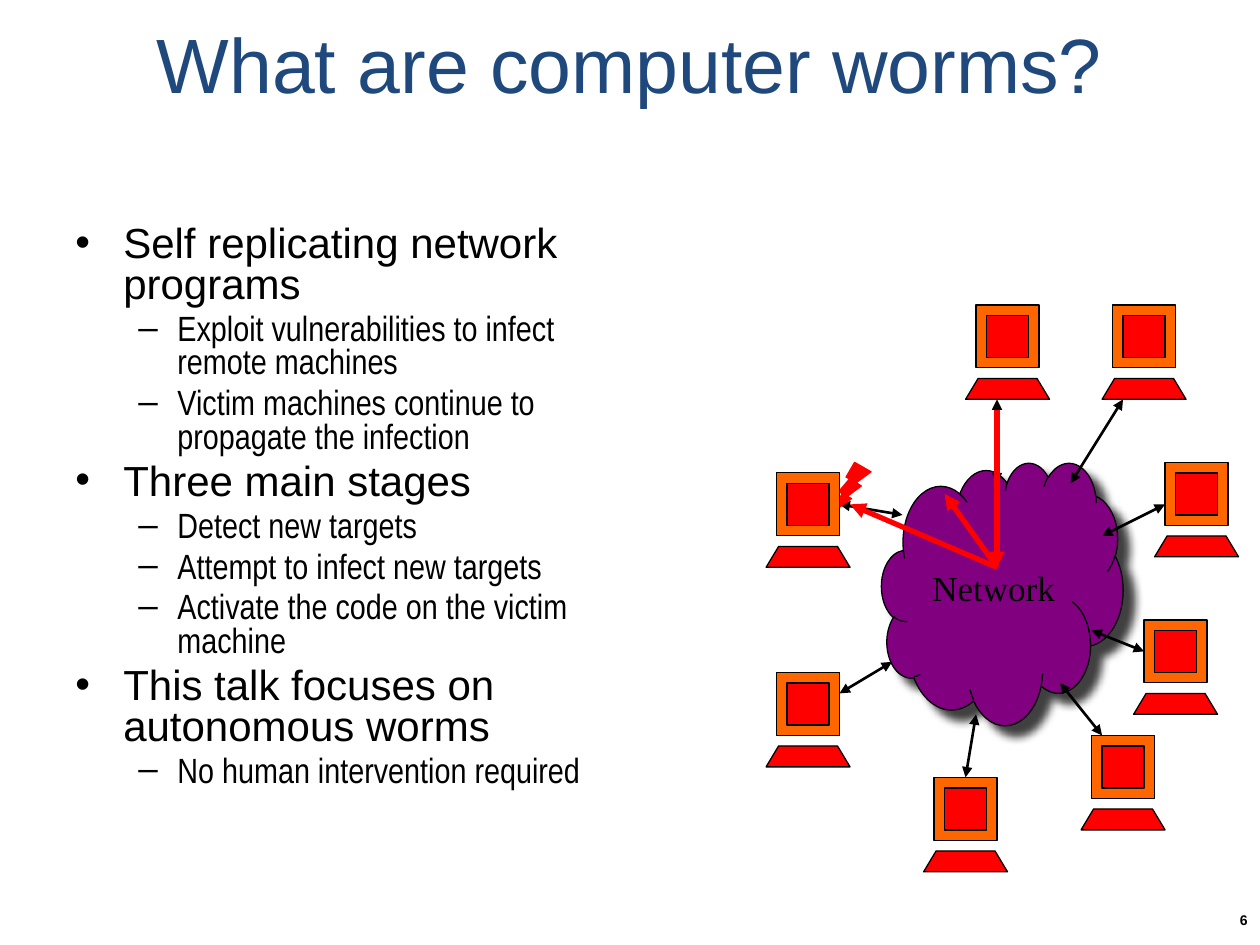
from lxml import etree
from pptx import Presentation, util as u
from pptx.dml.color import RGBColor
from pptx.enum import shapes as kinds, text as texts
from pptx.oxml import ns

NAVY = RGBColor(0x1F, 0x49, 0x7D)
BLACK = RGBColor(0, 0, 0)
RED = RGBColor(0xFF, 0, 0)
ORANGE = RGBColor(0xFF, 0x66, 0)
PURPLE = RGBColor(0x80, 0, 0x80)

BULLETS = [
    (0, "Self replicating network programs"),
    (1, "Exploit vulnerabilities to infect remote machines"),
    (1, "Victim machines continue to propagate the infection"),
    (0, "Three main stages"),
    (1, "Detect new targets"),
    (1, "Attempt to infect new targets"),
    (1, "Activate the code on the victim \nmachine"),
    (0, "This talk focuses on \nautonomous worms"),
    (1, "No human intervention required"),
]
# Per level: mark, font, size, left margin and hanging indent
LEVELS = [("•", "Arial", 24, 0.38, 0.38), ("–", "Arial Narrow", 20, 0.81, 0.31)]

# The diagram is laid out on a grid this many cells wide
GRID_COLUMNS = 45
COMPUTERS = [(19, 0), (32, 0), (0, 16), (37, 15), (35, 30), (0, 35), (15, 45), (30, 41)]
LINKS = [
    (22, 9, 22, 17), (34, 9, 29, 17), (38, 19, 32, 22), (36, 33, 31, 31),
    (32, 41, 28, 36), (19, 45, 20, 39), (7, 37, 12, 34), (7, 19, 13, 20),
]
ATTACKS = [(22, 25, 17, 18), (22, 10, 22, 25), (22, 25, 8, 19)]


def add_xml(parent, tag, **attributes):
    return etree.SubElement(parent, ns.qn(tag), attributes)


def add_span(para, words, font, size, color, bold=False):
    span = para.add_run()
    span.text = words
    span.font.name = font
    span.font.size = u.Pt(size)
    span.font.color.rgb = color
    span.font.bold = bold


def add_label(page, box, words, size, color, align, bold=False):
    """Place one vertically centred line of Arial text."""
    frame = page.shapes.add_textbox(*box).text_frame
    frame.word_wrap = True
    frame.vertical_anchor = texts.MSO_ANCHOR.MIDDLE
    frame.paragraphs[0].alignment = align
    add_span(frame.paragraphs[0], words, "Arial", size, color, bold)


def add_bullets(page, box):
    frame = page.shapes.add_textbox(*box).text_frame
    frame.word_wrap = True
    for index, (level, words) in enumerate(BULLETS):
        mark, font, size, margin, hang = LEVELS[level]
        para = frame.add_paragraph() if index else frame.paragraphs[0]
        para.level = level
        para.line_spacing = 0.8
        props = para._p.get_or_add_pPr()
        props.set("marL", str(u.Inches(margin)))
        props.set("indent", str(-u.Inches(hang)))
        add_xml(add_xml(props, "a:spcBef"), "a:spcPct", val="20000")
        add_xml(props, "a:buFont", typeface="Arial")
        add_xml(props, "a:buChar", char=mark)
        for number, line in enumerate(words.split("\n")):
            if number:
                para.add_line_break()
            add_span(para, line, font, size, BLACK)


def paint(shape, fill, line=BLACK):
    shape.shadow.inherit = False
    shape.fill.solid()
    shape.fill.fore_color.rgb = fill
    shape.line.color.rgb = line
    shape.line.width = u.Pt(0.75)


def add_arrow(page, points, color, width, both_ends):
    arrow = page.shapes.add_connector(kinds.MSO_CONNECTOR.STRAIGHT, *points)
    arrow.line.color.rgb = color
    arrow.line.width = u.Pt(width)
    line = arrow.line._get_or_add_ln()
    if both_ends:
        add_xml(line, "a:headEnd", type="triangle")
    add_xml(line, "a:tailEnd", type="triangle")
    add_xml(arrow._element.spPr, "a:effectLst")


def add_computer(page, left, top, cell):
    """Draw a monitor, its screen and a keyboard, 8 cells wide and 9 high."""
    for inset, down, side, fill in ((1, 0, 6, ORANGE), (2, 1, 4, RED)):
        square = page.shapes.add_shape(
            kinds.MSO_SHAPE.RECTANGLE,
            left + inset * cell, top + down * cell, side * cell, side * cell)
        paint(square, fill)
    outline = page.shapes.build_freeform(left, top + 9 * cell)
    slant = u.Inches(0.1)
    outline.add_line_segments([
        (left + slant, top + 7 * cell),
        (left + 8 * cell - slant, top + 7 * cell),
        (left + 8 * cell, top + 9 * cell),
    ])
    paint(outline.convert_to_shape(), RED)


def add_cloud(page, box):
    cloud = page.shapes.add_shape(kinds.MSO_SHAPE.CLOUD, *box)
    paint(cloud, PURPLE)
    effects = cloud._element.spPr.find(ns.qn("a:effectLst"))
    shadow = add_xml(
        effects, "a:outerShdw", blurRad=str(u.Pt(5)), dist=str(u.Pt(8.5)),
        dir=str(45 * 60000), algn="ctr", rotWithShape="0")
    add_xml(add_xml(shadow, "a:srgbClr", val=str(BLACK)), "a:alpha", val="75000")
    frame = cloud.text_frame
    frame.word_wrap = False
    frame.vertical_anchor = texts.MSO_ANCHOR.MIDDLE
    frame.paragraphs[0].alignment = texts.PP_ALIGN.CENTER
    add_span(frame.paragraphs[0], "Network", "Times New Roman", 20, BLACK)


def add_network(page, box):
    left, top, width, _ = box
    cell = width // GRID_COLUMNS

    def place(column, row):
        return left + column * cell, top + row * cell

    add_cloud(page, (*place(11, 15), 23 * cell, 25 * cell))
    for arrows, color, weight, both_ends in (
            (LINKS, BLACK, 1.5, True), (ATTACKS, RED, 3, False)):
        for start_x, start_y, end_x, end_y in arrows:
            points = (*place(start_x, start_y), *place(end_x, end_y))
            add_arrow(page, points, color, weight, both_ends)
    bolt = page.shapes.add_shape(
        kinds.MSO_SHAPE.LIGHTNING_BOLT, *place(6, 15), 4 * cell, 5 * cell)
    paint(bolt, RED, RED)
    bolt._element.spPr.xfrm.set("flipH", "1")
    for column, row in COMPUTERS:
        add_computer(page, *place(column, row), cell)


def inches(*lengths):
    return tuple(u.Inches(length) for length in lengths)


def main():
    deck = Presentation()
    deck.slide_width, deck.slide_height = inches(10, 7.5)
    page = deck.slides.add_slide(deck.slide_layouts[6])
    add_label(page, inches(0.5, 0, 9, 1), "What are computer worms?",
              44, NAVY, texts.PP_ALIGN.CENTER)
    add_bullets(page, inches(0.5, 1.75, 4.42, 4.95))
    add_label(page, inches(9.31, 7.1, 0.69, 0.4), "6",
              8, BLACK, texts.PP_ALIGN.RIGHT, bold=True)
    add_network(page, inches(6.08, 2.42, 3.75, 4.5))
    deck.save("out.pptx")


if __name__ == "__main__":
    main()
